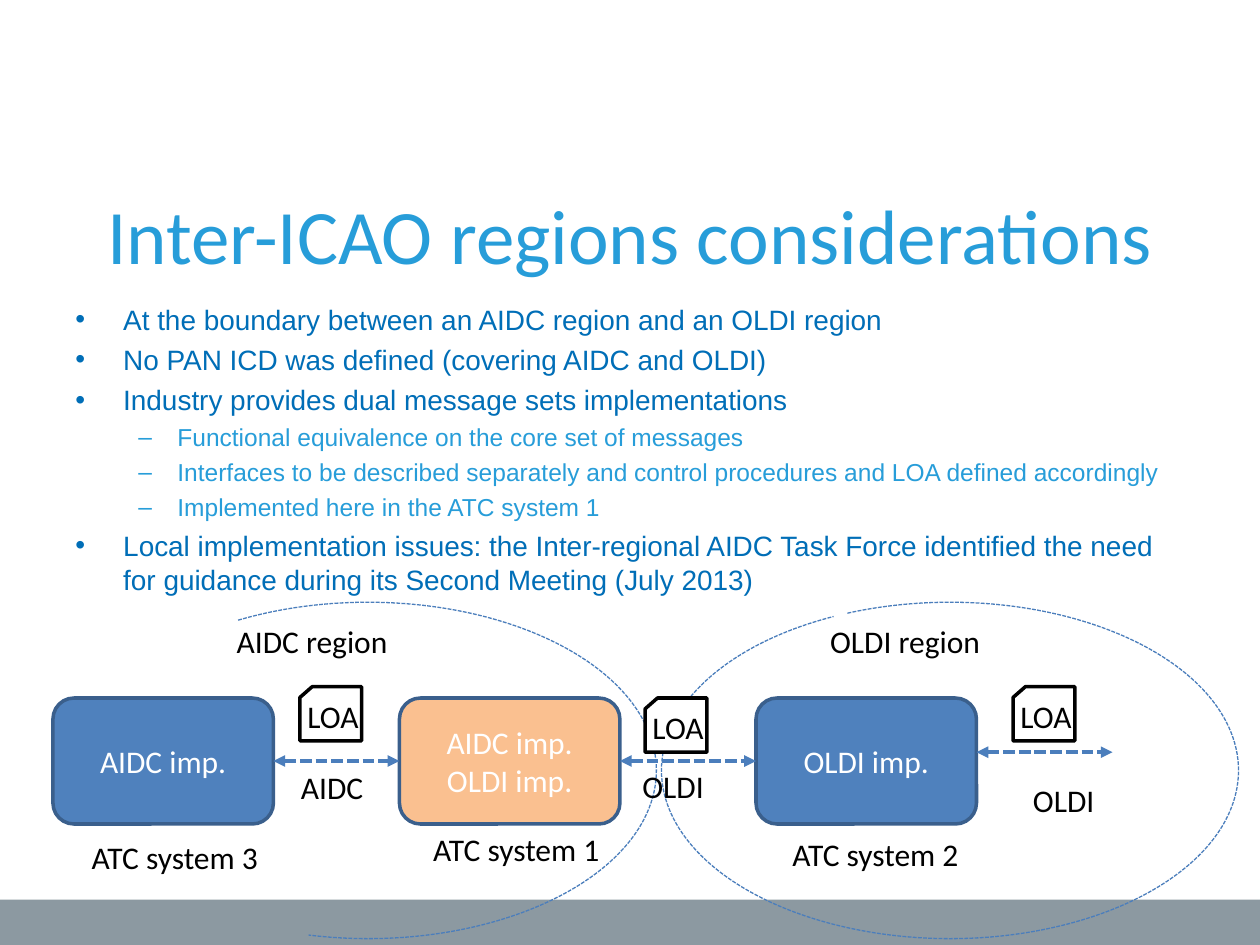
from lxml import etree
from pptx import Presentation
from pptx.dml.color import RGBColor
from pptx.enum.dml import MSO_LINE
from pptx.enum.shapes import MSO_CONNECTOR as CONNECTOR, MSO_SHAPE as SHAPE
from pptx.enum.text import MSO_ANCHOR as ANCHOR, PP_ALIGN as ALIGN
from pptx.oxml.ns import qn
from pptx.util import Inches, Pt

SKY, NAVY, BLUE, ORANGE = "279DD9", "006EB7", "4F81BD", "FAC090"
EDGE, DASH, GREY, BLACK, WHITE = "3A5F8C", "4B7EBC", "8C99A1", "000000", "FFFFFF"

LEVELS = [
    {"mark": "•", "left": 0.38, "hang": 0.38, "size": 16, "color": NAVY, "before": 3.8},
    {"mark": "–", "left": 0.81, "hang": 0.31, "size": 14, "color": SKY, "before": 3.3},
]
BULLETS = [
    (0, "At the boundary between an AIDC region and an OLDI region"),
    (0, "No PAN ICD was defined (covering AIDC and OLDI)"),
    (0, "Industry provides dual message sets implementations"),
    (1, "Functional equivalence on the core set of messages"),
    (1, "Interfaces to be described separately and control procedures and LOA defined accordingly"),
    (1, "Implemented here in the ATC system 1"),
    (0, "Local implementation issues: the Inter-regional AIDC Task Force identified the need "
        "for guidance during its Second Meeting (July 2013)"),
]


def rgb(color):
    """Turn a hex string into a colour."""
    return RGBColor.from_string(color)


def style_font(font, size, color, name="Calibri"):
    """Set size, colour and typeface of a font."""
    font.size, font.name = Pt(size), name
    font.color.rgb = rgb(color)


def style_line(line, color, width, dashed=False):
    """Set colour, width and dash of a line."""
    line.color.rgb = rgb(color)
    line.width = Pt(width)
    if dashed:
        line.dash_style = MSO_LINE.SQUARE_DOT


def add_figure(shapes, kind, left, top, width, height, fill=None):
    """Add a preset shape without shadow or outline."""
    figure = shapes.add_shape(kind, Inches(left), Inches(top), Inches(width), Inches(height))
    figure.shadow.inherit = False
    if fill:
        figure.fill.solid()
        figure.fill.fore_color.rgb = rgb(fill)
    else:
        figure.fill.background()
    figure.line.fill.background()
    return figure


def add_text(shapes, left, top, width, height, text, size=18, color=BLACK, wrap=False):
    """Add a text box in the slide's main typeface."""
    box = shapes.add_textbox(Inches(left), Inches(top), Inches(width), Inches(height))
    box.text_frame.word_wrap = wrap
    box.text_frame.text = text
    style_font(box.text_frame.paragraphs[0].runs[0].font, size, color)
    return box


def add_title(page, left, top, width, height):
    """Place the centred title."""
    box = add_text(page.shapes, left, top, width, height,
                   "Inter-ICAO regions considerations", 44, SKY, True)
    box.text_frame.paragraphs[0].alignment = ALIGN.CENTER


def add_bullets(page, left, top, width, height):
    """Place the two-level bullet list."""
    box = page.shapes.add_textbox(Inches(left), Inches(top), Inches(width), Inches(height))
    frame = box.text_frame
    frame.word_wrap = True
    frame.text = "\n".join(text for _, text in BULLETS)
    for index, (para, (depth, _)) in enumerate(zip(frame.paragraphs, BULLETS)):
        level = LEVELS[depth]
        para.level = depth
        props = para._p.get_or_add_pPr()
        props.set("marL", str(Inches(level["left"])))
        props.set("indent", str(-Inches(level["hang"])))
        etree.SubElement(props, qn("a:buFont"), typeface="Arial")
        etree.SubElement(props, qn("a:buChar"), char=level["mark"])
        para.space_before = Pt(level["before"] if index else 0)
        style_font(para.runs[0].font, level["size"], level["color"], "Arial")


def add_region(page, left, top, width, height, angles, name, label_left):
    """Draw a dashed region arc and its name."""
    arc = add_figure(page.shapes, SHAPE.ARC, left, top, width, height)
    for index, angle in enumerate(angles):
        arc.adjustments[index] = angle
    style_line(arc.line, DASH, 0.75, True)
    add_text(page.shapes, label_left, top + 0.11, 1.41, 0.4, name)


def add_system(page, left, top, width, height, text, fill, name, name_left, name_top):
    """Draw an ATC system box with its name below."""
    system = add_figure(page.shapes, SHAPE.ROUNDED_RECTANGLE, left, top, width, height, fill)
    style_line(system.line, EDGE, 2)
    frame = system.text_frame
    frame.text = text
    frame.vertical_anchor = ANCHOR.MIDDLE
    for para in frame.paragraphs:
        para.alignment = ALIGN.CENTER
        style_font(para.runs[0].font, 18, WHITE)
    add_text(page.shapes, name_left, name_top, 1.53, 0.4, name)
    return system


def add_link(page, left, right, y, start=None, end=None):
    """Draw a dashed two-way arrow, joined to the given systems."""
    link = page.shapes.add_connector(
        CONNECTOR.STRAIGHT, Inches(left), Inches(y), Inches(right), Inches(y))
    if start:
        link.begin_connect(start, 3)
    if end:
        link.end_connect(end, 1)
    style_line(link.line, DASH, 2.25, True)
    outline = link.line._get_or_add_ln()
    for tip in ("a:headEnd", "a:tailEnd"):
        etree.SubElement(outline, qn(tip), type="triangle")
    etree.SubElement(link._element.spPr, qn("a:effectLst"))


def add_agreement(page, left, top, width, height):
    """Draw a grouped LOA card."""
    shapes = page.shapes.add_group_shape().shapes
    card = add_figure(shapes, SHAPE.FLOWCHART_CARD, left, top, width, height, WHITE)
    style_line(card.line, BLACK, 2)
    add_text(shapes, left - 0.04, top + 0.03, 0.61, 0.4, "LOA")


def add_diagram(page, left, top, width, height):
    """Place systems, regions, links and agreements."""
    row, middle = top + 0.76, top + 1.26
    size = (1.75, 1)
    first = add_system(page, left + 2.75, row, *size, "AIDC imp.\nOLDI imp.", ORANGE,
                       "ATC system 1", 3.34, 6.54)
    second = add_system(page, left + 5.58, row, *size, "OLDI imp.", BLUE,
                        "ATC system 2", 6.19, 6.58)
    third = add_system(page, left, row, *size, "AIDC imp.", BLUE,
                       "ATC system 3", 0.63, 6.6)
    arc_width = 4.58
    add_region(page, left + 0.21, top, arc_width, height, (137.51, 65.89),
               "AIDC region", 1.78)
    add_region(page, left + width - arc_width, top, arc_width, height, (142.13, 139.74),
               "OLDI region", 6.49)
    add_link(page, 2.17, 3.17, middle, third, first)
    add_link(page, 4.92, 6, middle, first, second)
    add_link(page, 7.75, 8.83, middle - 0.07)
    for label_left, label_top, name in [(2.29, 6.05, "AIDC"), (5, 6.04, "OLDI"),
                                        (8.1, 6.15, "OLDI")]:
        add_text(page.shapes, label_left, label_top, 0.7, 0.4, name)
    for card_left, card_top in [(2.38, 5.45), (5.12, 5.54), (8.04, 5.45)]:
        add_agreement(page, card_left, card_top, 0.49, 0.43)


def main():
    """Build and save the slide."""
    deck = Presentation()
    deck.slide_width, deck.slide_height = Inches(10), Inches(7.5)
    page = deck.slides.add_slide(deck.slide_layouts[6])
    add_figure(page.shapes, SHAPE.RECTANGLE, 0, 7.14, 10, 0.36, GREY)
    add_title(page, 0.5, 1.44, 9, 1.25)
    add_bullets(page, 0.5, 2.35, 9, 4.21)
    add_diagram(page, 0.42, 4.78, 9.41, 2.67)
    deck.save("out.pptx")


if __name__ == "__main__":
    main()
